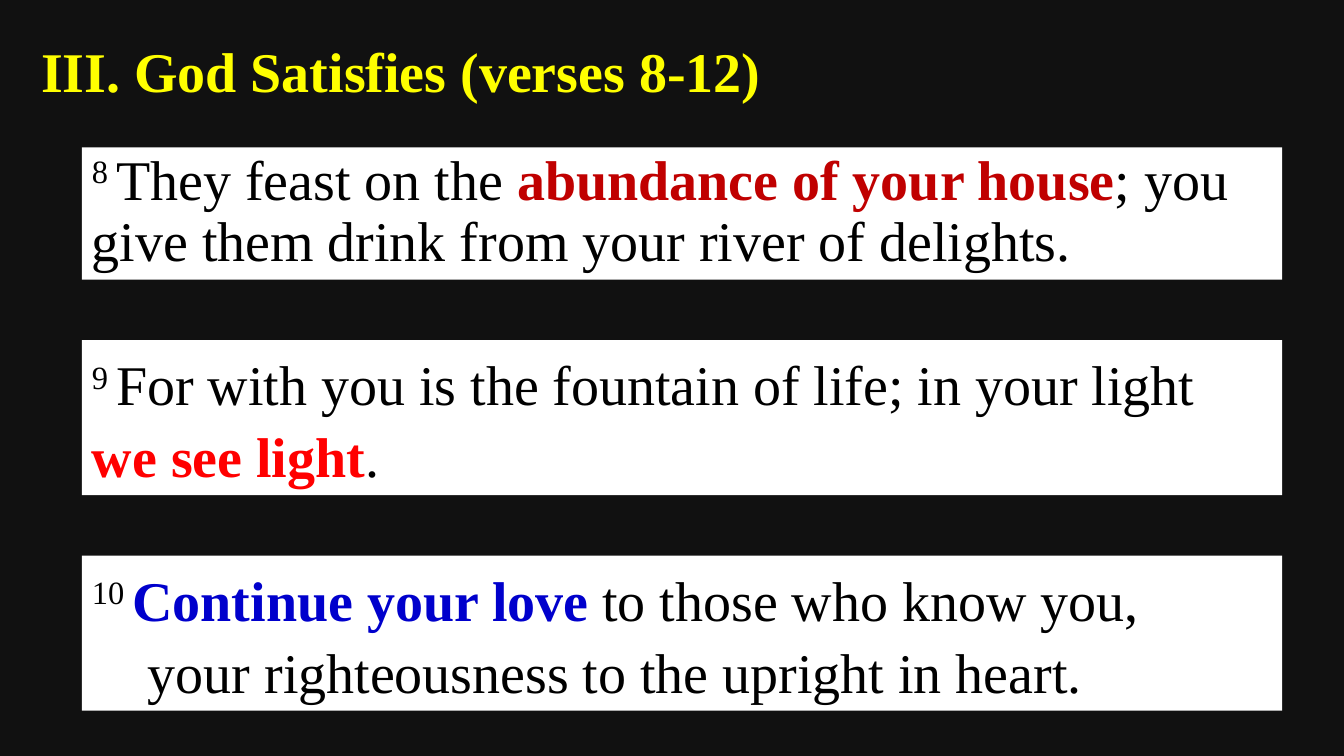
from dataclasses import dataclass

from pptx import Presentation
from pptx.dml.color import RGBColor as Rgb
from pptx.enum.shapes import MSO_SHAPE as Shape
from pptx.enum.text import MSO_ANCHOR as Anchor
from pptx.enum.text import MSO_AUTO_SIZE as Fit
from pptx.enum.text import PP_ALIGN as Align
from pptx.util import Inches, Pt


@dataclass(frozen=True)
class Theme:
    font: str = "Times New Roman"
    size: int = 40
    back: str = "111111"
    card: str = "FFFFFF"
    ink: str = "000000"
    title: str = "FFFF00"
    wine: str = "C00000"
    red: str = "FF0000"
    blue: str = "0000CC"


@dataclass(frozen=True)
class Span:
    text: str
    color: str
    bold: bool = False


@dataclass(frozen=True)
class Verse:
    mark: str
    spans: tuple[Span, ...]
    high: float  # share of slide height
    line: float
    before: int = 0
    hang: int = 0


THEME = Theme()
WIDE, TALL = Inches(13.33), Inches(7.5)

# Card column, as shares of the slide
LEFT, WIDTH, TOP, GAP = 0.061, 0.893, 0.195, 0.08

VERSES = (
    Verse("8 ", (
        Span("They feast on the ", THEME.ink),
        Span("abundance of your house", THEME.wine, True),
        Span("; you give them drink from your river of delights.", THEME.ink),
    ), high=0.175, line=0.9, before=10),
    Verse("9 ", (
        Span("For with you is the fountain of life; in your light ", THEME.ink),
        Span("we see light", THEME.red, True),
        Span(".", THEME.ink),
    ), high=0.205, line=1.07),
    Verse("10 ", (
        Span("Continue your love", THEME.blue, True),
        Span(" to those who know you,\nyour righteousness to the upright in heart.",
             THEME.ink),
    ), high=0.205, line=1.07, hang=40),
)


def area(x: float, y: float, w: float, h: float) -> tuple[int, ...]:
    """Turn shares of the slide into lengths."""
    return int(x * WIDE), int(y * TALL), int(w * WIDE), int(h * TALL)


def write(para, text: str, *, color: str, bold: bool = False, base: int = 0) -> None:
    """Add text to a paragraph; a newline becomes a line break."""
    for i, piece in enumerate(text.split("\n")):
        if i:
            para.add_line_break()
        run = para.add_run()
        run.text = piece
        font = run.font
        font.name, font.size, font.bold = THEME.font, Pt(THEME.size), bold
        font.color.rgb = Rgb.from_string(color)
        if base:
            font._element.set("baseline", str(base * 1000))


def setup(shape, *, line: float, before: int = 0, wrap: bool = True):
    """Prepare a text frame and return its first paragraph."""
    frame = shape.text_frame
    frame.word_wrap, frame.auto_size = wrap, Fit.SHAPE_TO_FIT_TEXT
    frame.vertical_anchor = Anchor.TOP
    para = frame.paragraphs[0]
    para.alignment, para.line_spacing = Align.LEFT, line
    para.space_before = Pt(before)
    return para


def draw(slide, verse: Verse, top: float) -> None:
    """Draw one verse on its card."""
    card = slide.shapes.add_shape(Shape.RECTANGLE, *area(LEFT, top, WIDTH, verse.high))
    card.shadow.inherit = False
    card.fill.solid()
    card.fill.fore_color.rgb = Rgb.from_string(THEME.card)
    card.line.fill.background()
    para = setup(card, line=verse.line, before=verse.before)
    if verse.hang:
        props = para._p.get_or_add_pPr()
        props.set("marL", str(int(Pt(verse.hang))))
        props.set("indent", str(-int(Pt(verse.hang))))
    write(para, verse.mark, color=THEME.ink, base=30)
    for span in verse.spans:
        write(para, span.text, color=span.color, bold=span.bold)


def main() -> None:
    deck = Presentation()
    deck.slide_width, deck.slide_height = WIDE, TALL
    slide = deck.slides.add_slide(deck.slide_layouts[5])
    slide.background.fill.solid()
    slide.background.fill.fore_color.rgb = Rgb.from_string(THEME.back)

    # Title
    title = slide.shapes.title
    title.left, title.top, title.width, title.height = area(0.023, 0.052, 0.572, 0.095)
    para = setup(title, line=0.9, before=10, wrap=False)
    write(para, "III. God Satisfies (verses 8-12)", color=THEME.title, bold=True)

    # Verse cards, stacked with equal gaps
    top = TOP
    for verse in VERSES:
        draw(slide, verse, top)
        top += verse.high + GAP

    deck.save("out.pptx")


if __name__ == "__main__":
    main()
